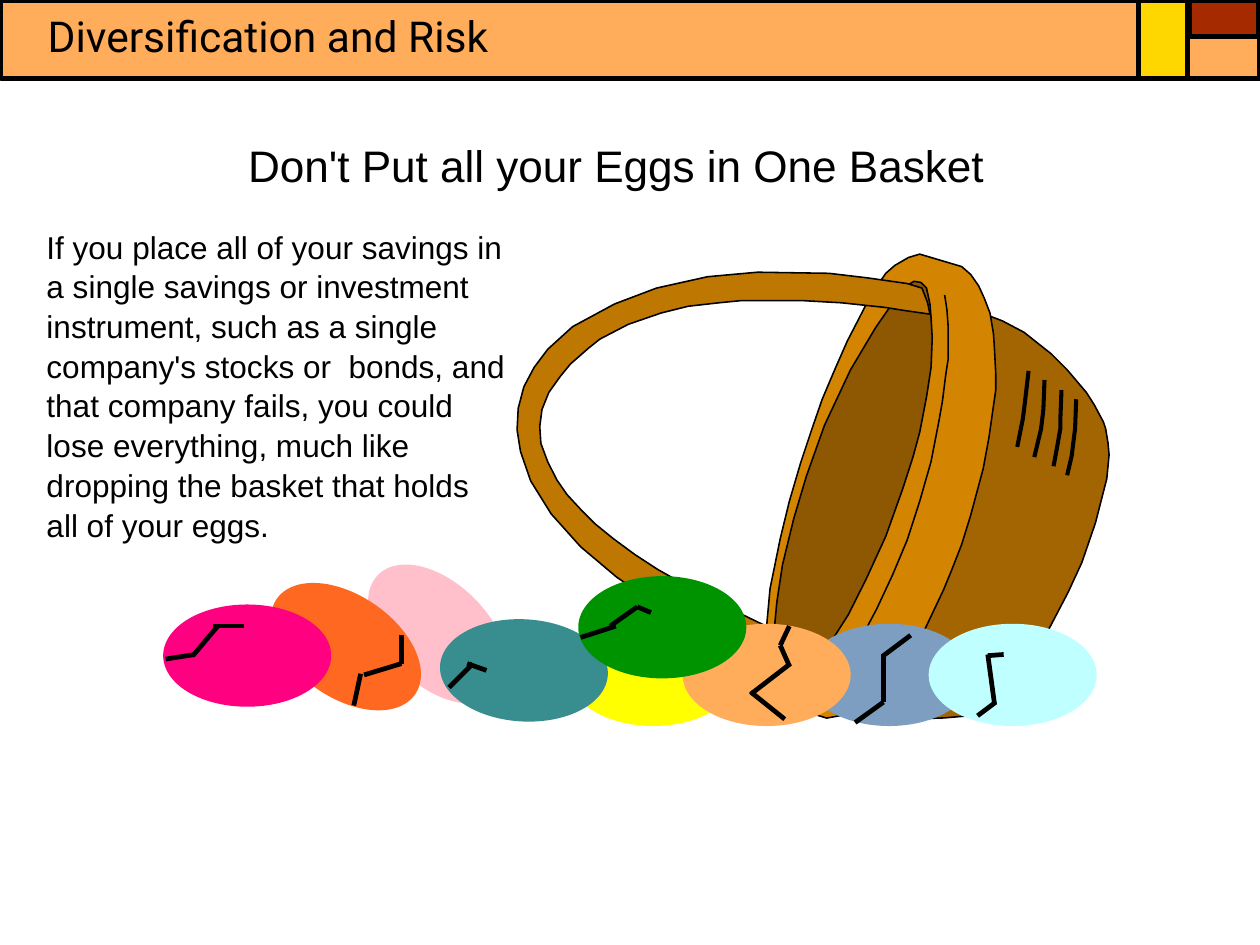
from dataclasses import dataclass

from lxml.etree import SubElement
from pptx import Presentation
from pptx.dml.color import RGBColor
from pptx.enum.shapes import MSO_CONNECTOR, MSO_SHAPE
from pptx.enum.text import MSO_ANCHOR, MSO_AUTO_SIZE, PP_ALIGN
from pptx.oxml.ns import qn
from pptx.util import Cm, Pt

# All coordinates below are whole hundredths of 2.54 cm
UNIT = Cm(2.54) / 100


@dataclass(frozen=True)
class Theme:
    ink: str = "000000"
    peach: str = "FFAD5B"
    brick: str = "A52A00"
    gold: str = "FFD700"
    basket_outside: str = "A36501"
    basket_inside: str = "8D5801"
    rim: str = "D38401"
    handle: str = "BE7701"
    title_font: str = "Roboto"
    body_font: str = "Arial"
    title_size: float = 27
    heading_size: float = 28
    body_size: float = 20
    thick: float = 3
    weave: float = 2.58
    thin: float = 1


THEME = Theme()

# Basket outlines
OUTSIDE = [
    (721, 619), (871, 278), (884, 283), (903, 293), (927, 312), (941, 326), (958, 346),
    (965, 357), (973, 372), (975, 378), (977, 390), (978, 401), (976, 422), (966, 461),
    (954, 496), (942, 522), (918, 568), (903, 591), (889, 609), (877, 619), (869, 625),
    (861, 629), (856, 631), (832, 633), (800, 634), (776, 632), (752, 628)]
RIM = [
    (676, 552), (679, 519), (688, 475), (696, 442), (706, 408), (716, 378), (725, 352),
    (736, 326), (747, 301), (764, 268), (773, 253), (781, 241), (789, 234), (801, 227),
    (811, 224), (848, 235), (856, 242), (863, 252), (868, 263), (873, 276), (876, 294),
    (877, 309), (878, 329), (878, 344), (872, 386), (867, 413), (856, 454), (848, 480),
    (839, 503), (832, 520), (814, 558), (806, 571), (796, 586), (786, 599), (773, 612),
    (762, 621), (752, 627), (740, 631), (729, 633), (689, 621), (684, 616), (677, 599)]
RIM_FOLD = [
    (689, 621), (696, 621), (704, 619), (719, 610), (727, 604), (734, 596), (742, 587),
    (750, 577), (758, 565), (765, 552), (773, 537), (787, 507), (800, 476), (811, 442),
    (821, 407), (828, 371), (831, 354), (834, 330), (836, 317), (836, 287), (835, 273),
    (833, 260)]
INSIDE = [
    (683, 587), (683, 552), (685, 531), (690, 498), (700, 457), (711, 420), (727, 375),
    (750, 326), (772, 289), (790, 263), (801, 251), (806, 248), (812, 249), (817, 254),
    (820, 268), (821, 280), (822, 298), (821, 324), (817, 350), (811, 381), (805, 403),
    (796, 431), (781, 473), (764, 510), (748, 542), (732, 567), (713, 590), (701, 599),
    (691, 599), (684, 589)]
HANDLE = [
    (719, 594), (707, 591), (644, 566), (616, 553), (581, 534), (544, 509), (512, 482),
    (486, 453), (468, 424), (459, 398), (456, 379), (457, 360), (462, 341), (471, 324),
    (483, 308), (505, 288), (542, 268), (579, 254), (624, 244), (668, 240), (731, 241),
    (765, 245), (800, 250), (813, 254), (818, 267), (820, 277), (799, 274), (780, 271),
    (742, 267), (707, 265), (654, 265), (634, 267), (607, 270), (583, 276), (554, 286),
    (529, 299), (519, 307), (503, 321), (494, 332), (484, 346), (478, 361), (476, 376),
    (477, 391), (483, 407), (491, 423), (500, 436), (512, 449), (525, 462), (541, 475),
    (560, 489), (580, 502), (603, 515), (628, 529), (655, 542), (684, 556), (716, 569)]
BASKET = [(OUTSIDE, THEME.basket_outside), (RIM, THEME.rim), (RIM_FOLD, None),
          (INSIDE, THEME.basket_inside), (HANDLE, THEME.handle)]

WEAVE_MARKS = [
    [(846, 610), (850, 604), (858, 590), (867, 569), (871, 555)],
    [(929, 411), (932, 395), (935, 378), (935, 370), (936, 344)],
    [(897, 394), (902, 369), (904, 353), (907, 327)],
    [(912, 403), (918, 378), (920, 361), (921, 335)],
    [(941, 419), (945, 402), (947, 386), (948, 378), (949, 352)]]

# Eggs: left, top, rotation, colour
EGG_SIZE = (144, 86)
EGGS = [
    (504, 552, 0, "FFFF00"), (712, 552, 0, "7D9EC0"), (604, 552, 0, THEME.peach),
    (314, 516, 44.8, "FFC0CB"), (821, 552, 0, "C0FFFF"), (390, 548, 3.2, "388E8E"),
    (512, 510, 0, "009300"), (233, 527, 214.6, "FF6820"), (146, 535, 0, "FF0080")]

# Cracks: from x, from y, to x, to y
CRACKS = [
    (354, 560, 354, 585), (354, 585, 321, 595), (318, 594, 312, 622),
    (396, 606, 417, 585), (412, 585, 429, 591),
    (512, 562, 543, 552), (538, 552, 562, 535), (562, 535, 574, 540),
    (146, 581, 172, 577), (171, 577, 192, 552), (188, 552, 215, 552),
    (696, 552, 688, 569), (688, 569, 696, 587), (697, 585, 662, 612), (662, 610, 692, 634),
    (754, 637, 779, 619), (779, 577, 779, 619), (779, 578, 803, 560),
    (871, 577, 877, 621), (862, 631, 878, 619), (871, 578, 885, 577)]

# Header blocks: left, top, width, height, colour
HEADER = [(1, 1, 1110, 68, THEME.peach), (1049, 1, 61, 31, THEME.brick),
          (1004, 1, 43, 68, THEME.gold)]


def lengths(*values):
    return [round(value * UNIT) for value in values]


class SlideBuilder:
    def __init__(self, slide, theme):
        self.slide, self.shapes, self.theme = slide, slide.shapes, theme

    def paint(self, shape, fill, line, width):
        shape.shadow.inherit = False
        if fill:
            shape.fill.solid()
            shape.fill.fore_color.rgb = RGBColor.from_string(fill)
        else:
            shape.fill.background()
        shape.line.color.rgb = RGBColor.from_string(line)
        shape.line.width = Pt(width)

    def preset(self, kind, box, fill, line, rotation=0):
        shape = self.shapes.add_shape(kind, *lengths(*box))
        shape.rotation = rotation
        self.paint(shape, fill, line, self.theme.thick)

    def outline(self, points, width, fill=None):
        builder = self.shapes.build_freeform(*points[0], scale=UNIT)
        builder.add_line_segments(points[1:], close=fill is not None)
        self.paint(builder.convert_to_shape(), fill, self.theme.ink, width)

    def line(self, ends):
        connector = self.shapes.add_connector(MSO_CONNECTOR.STRAIGHT, *lengths(*ends))
        connector.line.color.rgb = RGBColor.from_string(self.theme.ink)
        connector.line.width = Pt(self.theme.thick)
        SubElement(connector._element.spPr, qn("a:effectLst"))

    def text(self, shape, box, wording, font, size, align=PP_ALIGN.LEFT, spacing=1.0):
        names = ("left", "top", "width", "height")
        frame = shape.text_frame
        frame.text = wording
        paragraph = frame.paragraphs[0]
        formats = [
            (shape, dict(zip(names, lengths(*box)))),
            (frame, {"word_wrap": True, "auto_size": MSO_AUTO_SIZE.NONE,
                     "vertical_anchor": MSO_ANCHOR.TOP}),
            (paragraph, {"alignment": align, "line_spacing": spacing, "space_before": Pt(0)}),
            (paragraph.runs[0].font, {"name": font, "size": Pt(size)})]
        for target, values in formats:
            for name, value in values.items():
                setattr(target, name, value)
        paragraph.runs[0].font.color.rgb = RGBColor.from_string(self.theme.ink)
        return paragraph

    def plain_paragraph(self, paragraph):
        properties = paragraph._p.get_or_add_pPr()
        properties.set("marL", "0")
        properties.set("indent", "0")
        SubElement(properties, qn("a:buNone"))

    def bring_to_front(self, shape):
        self.shapes._spTree.append(shape._element)


def main():
    presentation = Presentation()
    presentation.slide_width, presentation.slide_height = Cm(28.22), Cm(21.16)
    slide = presentation.slides.add_slide(presentation.slide_layouts[1])
    builder = SlideBuilder(slide, THEME)

    # Header and title
    for *box, colour in HEADER:
        builder.preset(MSO_SHAPE.RECTANGLE, box, colour, THEME.ink)
    title = slide.shapes.title
    builder.text(title, (32, 4, 581, 56), "Diversification and Risk",
                 THEME.title_font, THEME.title_size)
    builder.bring_to_front(title)

    # Basket
    for points, colour in BASKET:
        builder.outline(points, THEME.thin, colour)
    for points in WEAVE_MARKS:
        builder.outline(points, THEME.weave)

    # Cracked eggs
    for left, top, rotation, colour in EGGS:
        builder.preset(MSO_SHAPE.OVAL, (left, top, *EGG_SIZE), colour, colour, rotation)
    for ends in CRACKS:
        builder.line(ends)

    # Heading and explanation
    heading_box = (189, 115, 708, 93)
    heading = slide.shapes.add_textbox(*lengths(*heading_box))
    builder.text(heading, heading_box, "Don't Put all your Eggs in One Basket",
                 THEME.body_font, THEME.heading_size, PP_ALIGN.CENTER, 1.05)
    body = slide.placeholders[1]
    explanation = builder.text(
        body, (31, 194, 425, 279),
        "If you place all of your savings in a single savings or investment instrument, "
        "such as a single company's stocks or  bonds, and that company fails, you could "
        "lose everything, much like dropping the basket that holds all of your eggs.",
        THEME.body_font, THEME.body_size, spacing=1.05)
    builder.plain_paragraph(explanation)
    builder.bring_to_front(body)

    presentation.save("out.pptx")


if __name__ == "__main__":
    main()
